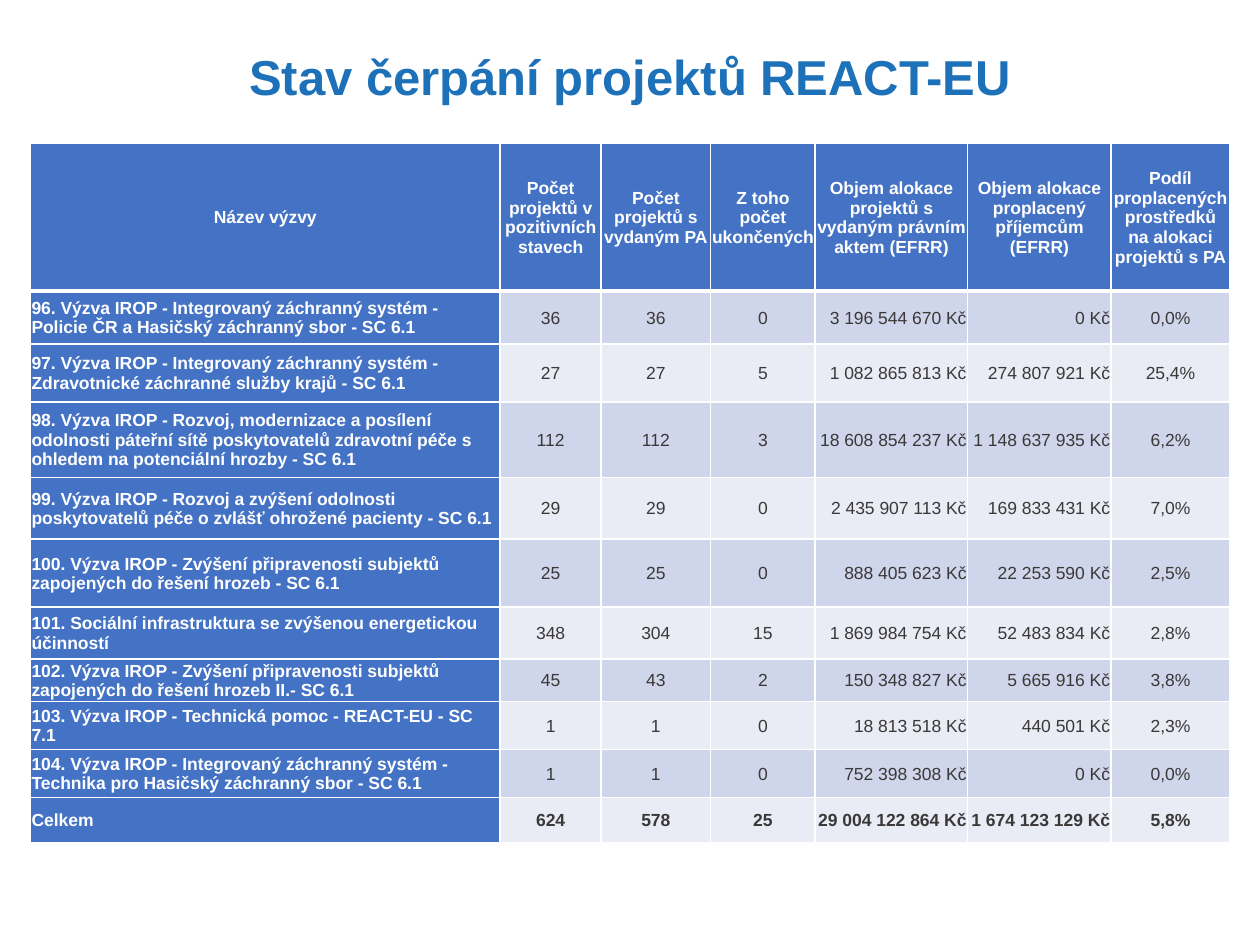
from dataclasses import dataclass

from lxml.etree import SubElement
from pptx import Presentation
from pptx.dml.color import RGBColor
from pptx.enum.text import MSO_ANCHOR, PP_ALIGN
from pptx.oxml.ns import qn
from pptx.util import Inches, Pt

FONT = "Arial"
COLORS = {
    "title": "1D71B8",
    "head": "4472C4",
    "odd": "CFD5EA",
    "even": "E9EBF5",
    "white": "FFFFFF",
    "text": "3B3838",
}
COLUMNS = [3.73, 0.8, 0.87, 0.83, 1.21, 1.14, 0.94]
HEADER_HEIGHT = 1.17
HEADERS = [
    "Název výzvy",
    "Počet projektů v pozitivních stavech",
    "Počet projektů s vydaným PA",
    "Z toho počet ukončených",
    "Objem alokace projektů s vydaným právním aktem (EFRR)",
    "Objem alokace proplacený příjemcům (EFRR)",
    "Podíl proplacených prostředků na alokaci projektů s PA",
]
LEFT, CENTER, RIGHT = PP_ALIGN.LEFT, PP_ALIGN.CENTER, PP_ALIGN.RIGHT
ALIGNS = [LEFT, CENTER, CENTER, CENTER, RIGHT, RIGHT, CENTER]


@dataclass
class Call:
    height: float
    name: str
    positive: str
    approved: str
    finished: str
    allocated: str
    paid: str
    share: str

    def values(self) -> list[str]:
        return [self.name, self.positive, self.approved, self.finished,
                self.allocated, self.paid, self.share]


CALLS = [
    Call(0.42, "96. Výzva IROP - Integrovaný záchranný systém - Policie ČR a Hasičský záchranný sbor - SC 6.1",
         "36", "36", "0", "3 196 544 670 Kč", "0 Kč", "0,0%"),
    Call(0.46, "97. Výzva IROP - Integrovaný záchranný systém - Zdravotnické záchranné služby krajů - SC 6.1",
         "27", "27", "5", "1 082 865 813 Kč", "274 807 921 Kč", "25,4%"),
    Call(0.6, "98. Výzva IROP - Rozvoj, modernizace a posílení odolnosti páteřní sítě poskytovatelů "
         "zdravotní péče s ohledem na potenciální hrozby - SC 6.1",
         "112", "112", "3", "18 608 854 237 Kč", "1 148 637 935 Kč", "6,2%"),
    Call(0.49, "99. Výzva IROP - Rozvoj a zvýšení odolnosti poskytovatelů péče o zvlášť ohrožené pacienty - SC 6.1",
         "29", "29", "0", "2 435 907 113 Kč", "169 833 431 Kč", "7,0%"),
    Call(0.54, "100. Výzva IROP - Zvýšení připravenosti subjektů zapojených do řešení hrozeb - SC 6.1",
         "25", "25", "0", "888 405 623 Kč", "22 253 590 Kč", "2,5%"),
    Call(0.41, "101. Sociální infrastruktura se zvýšenou energetickou účinností",
         "348", "304", "15", "1 869 984 754 Kč", "52 483 834 Kč", "2,8%"),
    Call(0.34, "102. Výzva IROP - Zvýšení připravenosti subjektů zapojených do řešení hrozeb II.- SC 6.1",
         "45", "43", "2", "150 348 827 Kč", "5 665 916 Kč", "3,8%"),
    Call(0.38, "103. Výzva IROP - Technická pomoc - REACT-EU - SC 7.1",
         "1", "1", "0", "18 813 518 Kč", "440 501 Kč", "2,3%"),
    Call(0.38, "104. Výzva IROP - Integrovaný záchranný systém - Technika pro Hasičský záchranný sbor - SC 6.1",
         "1", "1", "0", "752 398 308 Kč", "0 Kč", "0,0%"),
    Call(0.36, "Celkem", "624", "578", "25", "29 004 122 864 Kč", "1 674 123 129 Kč", "5,8%"),
]


def rgb(name: str) -> RGBColor:
    return RGBColor.from_string(COLORS[name])


def style_paragraph(p, size: float, color: str, bold: bool, align) -> None:
    p.alignment = align
    p.font.name = FONT
    p.font.size = Pt(size)
    p.font.bold = bold
    p.font.color.rgb = rgb(color)


def add_borders(cell, top: float, bottom: float) -> None:
    tc_pr = cell._tc.get_or_add_tcPr()
    for side, width in (("L", 1), ("R", 1), ("T", top), ("B", bottom)):
        ln = SubElement(tc_pr, qn(f"a:ln{side}"), w=str(Pt(width)))
        fill = SubElement(ln, qn("a:solidFill"))
        SubElement(fill, qn("a:srgbClr"), val=COLORS["white"])


def fill_cell(cell, text: str, row: int, col: int) -> None:
    header = row == 0
    label = header or col == 0
    add_borders(cell, top=3 if row == 1 else 1, bottom=3 if header else 1)
    cell.fill.solid()
    cell.fill.fore_color.rgb = rgb("head" if label else "odd" if row % 2 else "even")
    cell.margin_left = cell.margin_right = cell.margin_top = Inches(0.01)
    cell.margin_bottom = 0
    cell.vertical_anchor = MSO_ANCHOR.MIDDLE
    p = cell.text_frame.paragraphs[0]
    p.text = text
    style_paragraph(p, 10, "white" if label else "text",
                    label or row == len(CALLS), CENTER if header else ALIGNS[col])


def add_title(s, text: str) -> None:
    sp = s.shapes.title
    sp.left, sp.top, sp.width, sp.height = map(Inches, (0.7, 0.01, 8.6, 1.25))
    tf = sp.text_frame
    tf.vertical_anchor = MSO_ANCHOR.MIDDLE
    p = tf.paragraphs[0]
    p.text = text
    p.line_spacing = 0.9
    style_paragraph(p, 28, "title", True, CENTER)


def add_calls_table(s) -> None:
    heights = [HEADER_HEIGHT] + [call.height for call in CALLS]
    rows = [HEADERS] + [call.values() for call in CALLS]
    table = s.shapes.add_table(
        len(rows), len(COLUMNS), Inches(0.24), Inches(1.14),
        Inches(sum(COLUMNS)), Inches(sum(heights))).table
    table.first_col = True
    for column, width in zip(table.columns, COLUMNS):
        column.width = Inches(width)
    for i, (height, values) in enumerate(zip(heights, rows)):
        table.rows[i].height = Inches(height)
        for j, text in enumerate(values):
            fill_cell(table.cell(i, j), text, i, j)


def main() -> None:
    prs = Presentation()
    prs.slide_width, prs.slide_height = Inches(10), Inches(7.5)
    s = prs.slides.add_slide(prs.slide_layouts[5])
    add_title(s, "Stav čerpání projektů REACT-EU")
    add_calls_table(s)
    prs.save("out.pptx")


if __name__ == "__main__":
    main()
